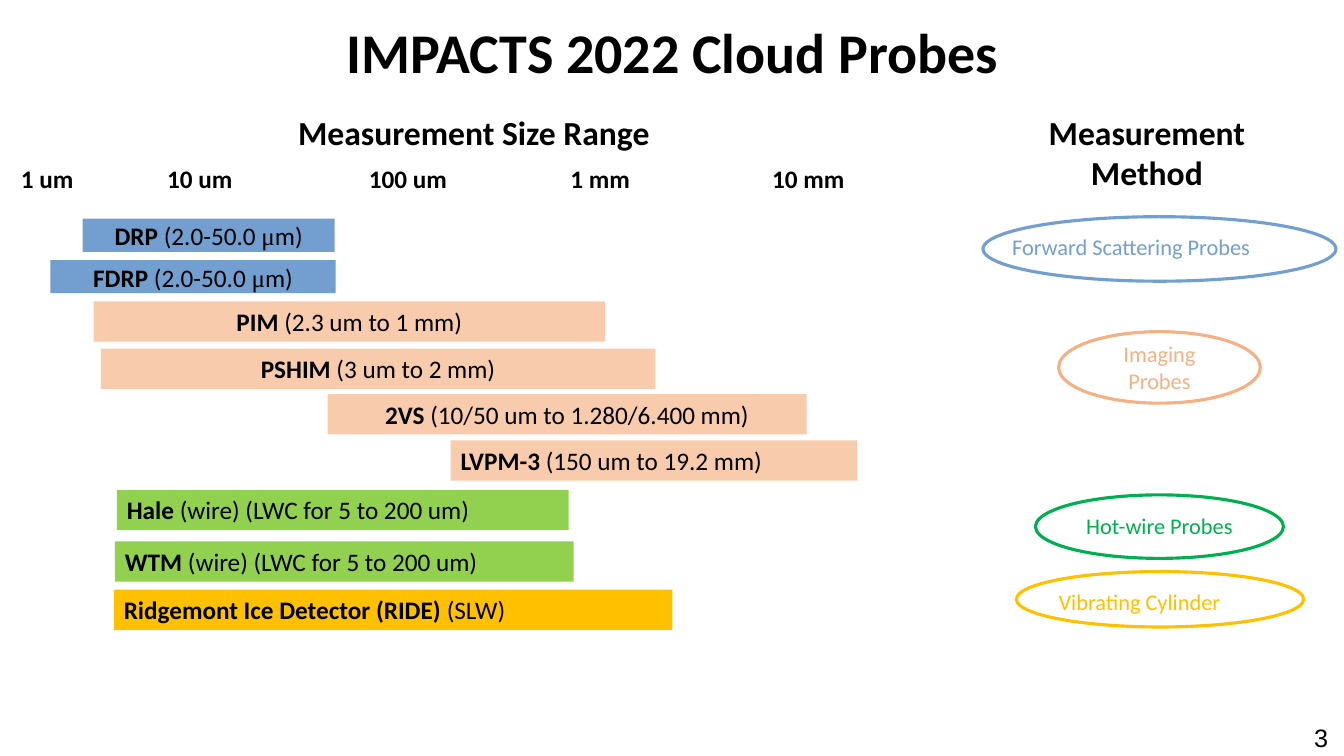
from dataclasses import dataclass
from typing import Any

from lxml.etree import SubElement
from pptx import Presentation
from pptx.dml.color import RGBColor
from pptx.enum.shapes import MSO_SHAPE
from pptx.enum.text import MSO_ANCHOR, MSO_AUTO_SIZE, PP_ALIGN
from pptx.oxml.ns import qn
from pptx.util import Emu, Pt

PX = 9144  # 100 px to the inch
LEFT, CENTER, RIGHT = PP_ALIGN.LEFT, PP_ALIGN.CENTER, PP_ALIGN.RIGHT


@dataclass(frozen=True)
class Theme:
    font: str = "Calibri"
    greek_font: str = "Times New Roman"
    number_font: str = "Arial"
    black: str = "000000"
    scattering: str = "729FCF"
    imaging: str = "F8CBAD"
    imaging_outline: str = "F4B183"
    hot_wire: str = "92D050"
    hot_wire_outline: str = "00B050"
    cylinder: str = "FFC000"
    title_size: int = 40
    heading_size: int = 24
    body_size: int = 18
    method_size: int = 16
    outline: float = 2.25


THEME = Theme()


@dataclass(frozen=True)
class Box:
    left: int
    top: int
    width: int
    height: int

    def emu(self) -> tuple[Emu, ...]:
        return tuple(Emu(n * PX) for n in (self.left, self.top, self.width, self.height))


@dataclass(frozen=True)
class Span:
    text: str
    bold: bool = False
    font: str = THEME.font


@dataclass(frozen=True)
class Bar:
    box: Box
    color: str
    spans: tuple[Span, ...]
    align: PP_ALIGN = CENTER
    inset: tuple[int, int] = (10, 5)


@dataclass(frozen=True)
class Method:
    lines: tuple[str, ...]
    color: str
    label: Box
    ellipse: Box
    align: PP_ALIGN = CENTER


@dataclass(frozen=True)
class Heading:
    lines: tuple[str, ...]
    box: Box


MICRON_RANGE = (Span(" (2.0-50.0 "), Span("μ", font=THEME.greek_font), Span("m)"))
WIRE_RANGE = Span(" (wire) (LWC for 5 to 200 um)")
TIGHT = (2, 2)

BARS = [
    Bar(Box(82, 217, 250, 33), THEME.scattering, (Span("DRP", True), *MICRON_RANGE), inset=TIGHT),
    Bar(Box(50, 258, 283, 33), THEME.scattering, (Span("FDRP", True), *MICRON_RANGE), inset=TIGHT),
    Bar(Box(93, 299, 507, 40), THEME.imaging, (Span("PIM", True), Span(" (2.3 um to 1 mm)"))),
    Bar(Box(100, 346, 550, 40), THEME.imaging, (Span("PSHIM", True), Span(" (3 um to 2 mm)"))),
    Bar(Box(325, 391, 475, 40), THEME.imaging,
        (Span("2VS", True), Span(" (10/50 um to 1.280/6.400 mm)"))),
    Bar(Box(447, 437, 403, 40), THEME.imaging,
        (Span("LVPM-3", True), Span(" (150 um to 19.2 mm)")), LEFT),
    Bar(Box(116, 486, 448, 40), THEME.hot_wire, (Span("Hale", True), WIRE_RANGE), LEFT),
    Bar(Box(114, 537, 455, 40), THEME.hot_wire, (Span("WTM", True), WIRE_RANGE), LEFT),
    Bar(Box(113, 585, 554, 40), THEME.cylinder,
        (Span("Ridgemont Ice Detector (RIDE) ", True), Span("(SLW)")), LEFT),
]

METHODS = [
    Method(("Forward Scattering Probes",), THEME.scattering,
           Box(994, 226, 311, 36), Box(975, 215, 350, 64), LEFT),
    Method(("Imaging", "Probes"), THEME.imaging_outline,
           Box(1095, 333, 110, 63), Box(1050, 329, 200, 71)),
    Method(("Hot-wire Probes",), THEME.hot_wire_outline,
           Box(1053, 503, 194, 36), Box(1027, 491, 246, 63)),
    Method(("Vibrating Cylinder",), THEME.cylinder,
           Box(1040, 579, 219, 36), Box(1008, 567, 285, 55), LEFT),
]

HEADINGS = [
    Heading(("Measurement Size Range",), Box(210, 106, 520, 50)),
    Heading(("Measurement", "Method"), Box(975, 106, 325, 90)),
]

SCALE_LABELS = ("1 um", "10 um", "100 um", "1 mm", "10 mm")
FIRST_TAB, DECADE = 145, 200


def apply(target: Any, values: dict[str, Any]) -> None:
    """Set each named attribute on the target."""
    for name, value in values.items():
        setattr(target, name, value)


def write(shape: Any, paras: list[tuple[Span, ...]], size: int, color: str = THEME.black,
          align: PP_ALIGN = CENTER, inset: tuple[int, int] = (10, 5),
          anchor: MSO_ANCHOR = MSO_ANCHOR.TOP, tabs: tuple[int, ...] = ()) -> None:
    """Fill a shape with paragraphs of styled spans."""
    across, down = (Emu(n * PX) for n in inset)
    frame = shape.text_frame
    apply(frame, {
        "word_wrap": True, "auto_size": MSO_AUTO_SIZE.NONE, "vertical_anchor": anchor,
        "margin_left": across, "margin_right": across,
        "margin_top": down, "margin_bottom": down,
    })
    for index, spans in enumerate(paras):
        para = frame.add_paragraph() if index else frame.paragraphs[0]
        para.alignment = align
        if tabs:
            tab_list = SubElement(para._p.get_or_add_pPr(), qn("a:tabLst"))
            for stop in tabs:
                SubElement(tab_list, qn("a:tab"), pos=str(stop * PX), algn="l")
        for span in spans:
            run = para.add_run()
            run.text = span.text
            apply(run.font, {"name": span.font, "size": Pt(size), "bold": span.bold})
            run.font.color.rgb = RGBColor.from_string(color)


def add_text(page: Any, box: Box, paras: list[tuple[Span, ...]], size: int, **options: Any) -> None:
    write(page.shapes.add_textbox(*box.emu()), paras, size, **options)


def add_bar(page: Any, bar: Bar) -> None:
    shape = page.shapes.add_shape(MSO_SHAPE.RECTANGLE, *bar.box.emu())
    shape.shadow.inherit = False
    shape.fill.solid()
    shape.fill.fore_color.rgb = RGBColor.from_string(bar.color)
    shape.line.fill.background()
    write(shape, [bar.spans], THEME.body_size, align=bar.align, inset=bar.inset)


def add_method(page: Any, method: Method) -> None:
    add_text(page, method.label, [(Span(line),) for line in method.lines],
             THEME.method_size, color=method.color, align=method.align)
    ellipse = page.shapes.add_shape(MSO_SHAPE.OVAL, *method.ellipse.emu())
    ellipse.shadow.inherit = False
    ellipse.fill.background()
    ellipse.line.color.rgb = RGBColor.from_string(method.color)
    ellipse.line.width = Pt(THEME.outline)


def add_title(page: Any, text: str) -> None:
    title = page.shapes.title
    apply(title, dict(zip(("left", "top", "width", "height"), Box(92, 4, 1150, 101).emu())))
    write(title, [(Span(text, True),)], THEME.title_size, anchor=MSO_ANCHOR.MIDDLE)
    title.text_frame.paragraphs[0].line_spacing = 0.9


def main() -> None:
    deck = Presentation()
    apply(deck, {"slide_width": Emu(1333 * PX), "slide_height": Emu(750 * PX)})
    page = deck.slides.add_slide(deck.slide_layouts.get_by_name("Title Only"))

    add_title(page, "IMPACTS 2022 Cloud Probes")
    for heading in HEADINGS:
        add_text(page, heading.box, [(Span(line, True),) for line in heading.lines],
                 THEME.heading_size)
    tabs = tuple(FIRST_TAB + DECADE * n for n in range(len(SCALE_LABELS) - 1))
    add_text(page, Box(11, 157, 1064, 40), [(Span("\t".join(SCALE_LABELS), True),)],
             THEME.body_size, align=LEFT, tabs=tabs)
    for bar in BARS:
        add_bar(page, bar)
    for method in METHODS:
        add_method(page, method)
    add_text(page, Box(1202, 712, 125, 32), [(Span("3", font=THEME.number_font),)],
             THEME.body_size, align=RIGHT)
    deck.save("out.pptx")


if __name__ == "__main__":
    main()
